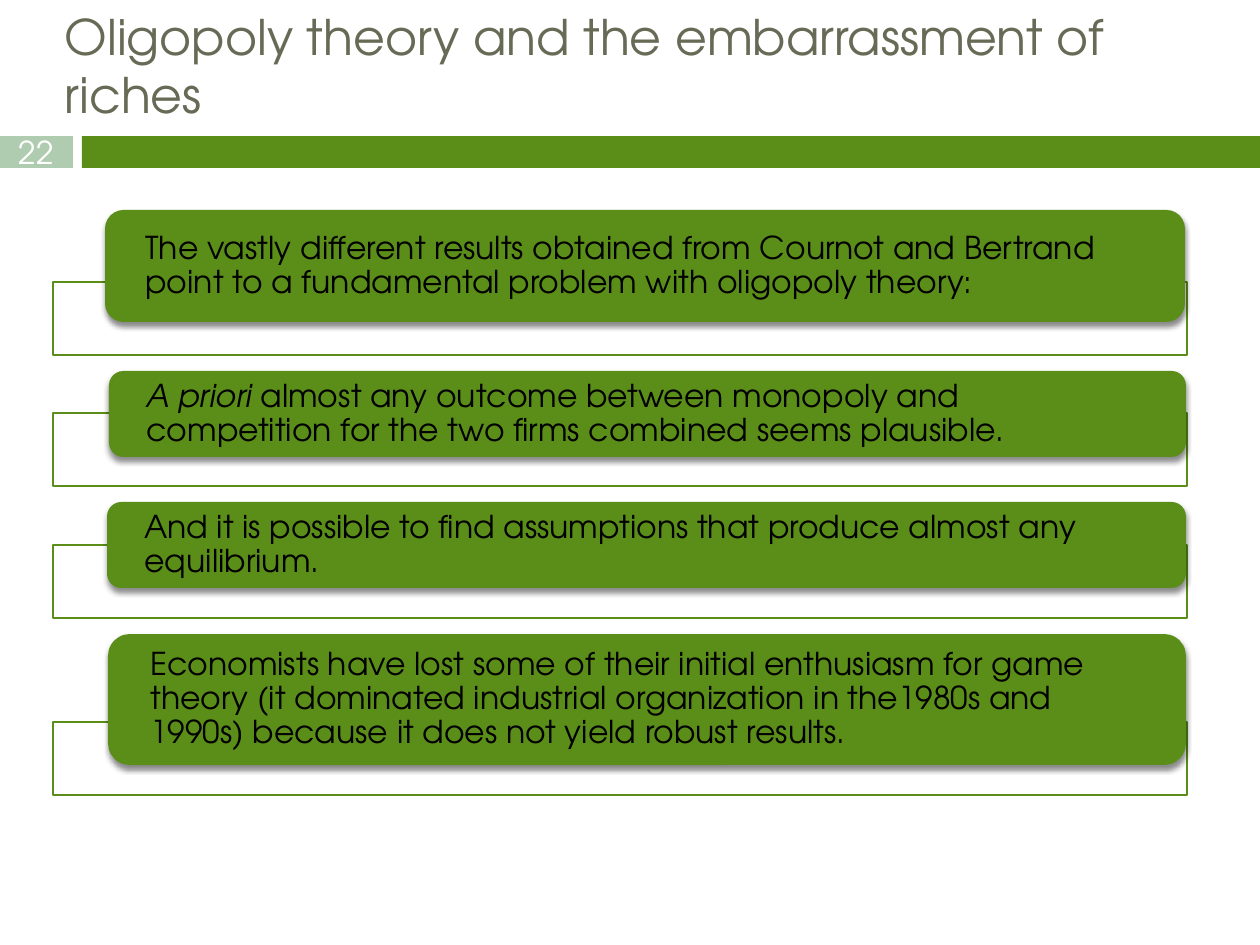
from lxml import etree
from pptx import Presentation
from pptx.dml.color import RGBColor
from pptx.enum.shapes import MSO_SHAPE
from pptx.enum.text import MSO_ANCHOR, PP_ALIGN
from pptx.oxml.ns import qn
from pptx.util import Emu, Pt

RECTANGLE, ROUNDED = MSO_SHAPE.RECTANGLE, MSO_SHAPE.ROUNDED_RECTANGLE
TOP, MIDDLE = MSO_ANCHOR.TOP, MSO_ANCHOR.MIDDLE
LEFT, CENTER = PP_ALIGN.LEFT, PP_ALIGN.CENTER

PX_PER_INCH = 126
WIDTH, HEIGHT = 1260, 945
GREEN, PALE_GREEN, OLIVE = "5A8E19", "B0CCB0", "676A55"
WHITE, BLACK = "FFFFFF", "000000"

BAR_TOP, BAR_HEIGHT = 136, 32
FRAME_LEFT, FRAME_WIDTH, FRAME_HEIGHT = 53, 1134, 73
FIRST_CARD_TOP, CARD_GAP = 210, 16

# card left, width, height, side inset, drop from card top to frame top, runs (text, italic)
CARDS = [
    (105, 1080, 112, 35, 72, [
        ("The vastly different results obtained from Cournot and Bertrand "
         "point to a fundamental problem with oligopoly theory:", False)]),
    (109, 1077, 86, 33, 42, [
        ("A priori", True),
        (" almost any outcome between monopoly and competition "
         "for the two firms combined seems plausible.", False)]),
    (107, 1079, 86, 33, 43, [
        ("And it is possible to find assumptions that produce almost any "
         "equilibrium.", False)]),
    (108, 1078, 131, 36, 88, [
        ("Economists have lost some of their initial enthusiasm for game "
         "theory (it dominated industrial organization in the1980s and 1990s) "
         "because it does not yield robust results.", False)]),
]


def px(length):
    return Emu(round(length * 914400 / PX_PER_INCH))


def color(hex_string):
    return RGBColor.from_string(hex_string)


def add_alpha(color_element, percent):
    etree.SubElement(color_element, qn("a:alpha"), val=str(percent * 1000))


class SlideBuilder:
    font_name = "TeX Gyre Adventor"

    def __init__(self, slide):
        self.slide = slide

    def shape(self, kind, left, top, width, height, fill):
        shape = self.slide.shapes.add_shape(kind, px(left), px(top), px(width), px(height))
        shape.shadow.inherit = False
        shape.fill.solid()
        shape.fill.fore_color.rgb = color(fill)
        shape.line.fill.background()
        return shape

    def text(self, shape, runs, size, font_color, anchor=MIDDLE, align=LEFT,
             side_inset=0, inset=0, line_spacing=1.0):
        text_frame = shape.text_frame
        text_frame.word_wrap = True
        text_frame.vertical_anchor = anchor
        text_frame.margin_left = text_frame.margin_right = px(side_inset)
        text_frame.margin_top = text_frame.margin_bottom = px(inset)
        paragraph = text_frame.paragraphs[0]
        paragraph.alignment = align
        paragraph.line_spacing = line_spacing
        for content, italic in runs:
            run = paragraph.add_run()
            run.text = content
            run.font.name = self.font_name
            run.font.size = Pt(size)
            run.font.italic = italic
            run.font.color.rgb = color(font_color)

    def title(self, content):
        box = self.slide.shapes.add_textbox(px(53), 0, px(1197), px(82))
        self.text(box, [(content, False)], 28, OLIVE, anchor=TOP, side_inset=12, inset=6)

    def number_bar(self, number):
        self.shape(RECTANGLE, 82, BAR_TOP, WIDTH - 82, BAR_HEIGHT, GREEN)
        badge = self.shape(RECTANGLE, 0, BAR_TOP, 73, BAR_HEIGHT, PALE_GREEN)
        self.text(badge, [(number, False)], 18, WHITE, align=CENTER)

    def frame(self, top):
        frame = self.shape(RECTANGLE, FRAME_LEFT, top, FRAME_WIDTH, FRAME_HEIGHT, WHITE)
        add_alpha(frame._element.spPr.find(qn("a:solidFill"))[0], 90)
        frame.line.color.rgb = color(GREEN)
        frame.line.width = Pt(0.79)

    def card(self, left, top, width, height, side_inset, runs):
        card = self.shape(ROUNDED, left, top, width, height, GREEN)
        self.drop_shadow(card)
        self.text(card, runs, 18, BLACK, side_inset=side_inset, line_spacing=0.9)

    def drop_shadow(self, shape):
        effects = shape._element.spPr.find(qn("a:effectLst"))
        shadow = etree.SubElement(effects, qn("a:outerShdw"), blurRad=str(Pt(3)),
                                  dist=str(Pt(2.4)), dir="5400000", rotWithShape="0")
        add_alpha(etree.SubElement(shadow, qn("a:srgbClr"), val=BLACK), 45)


def main():
    presentation = Presentation()
    presentation.slide_width, presentation.slide_height = px(WIDTH), px(HEIGHT)
    builder = SlideBuilder(presentation.slides.add_slide(presentation.slide_layouts[6]))

    builder.number_bar("22")
    builder.title("Oligopoly theory and the embarrassment of riches")
    card_top = FIRST_CARD_TOP
    for left, width, height, side_inset, drop, runs in CARDS:
        frame_top = card_top + drop
        builder.frame(frame_top)
        builder.card(left, card_top, width, height, side_inset, runs)
        card_top = frame_top + FRAME_HEIGHT + CARD_GAP

    presentation.save("out.pptx")


if __name__ == "__main__":
    main()
